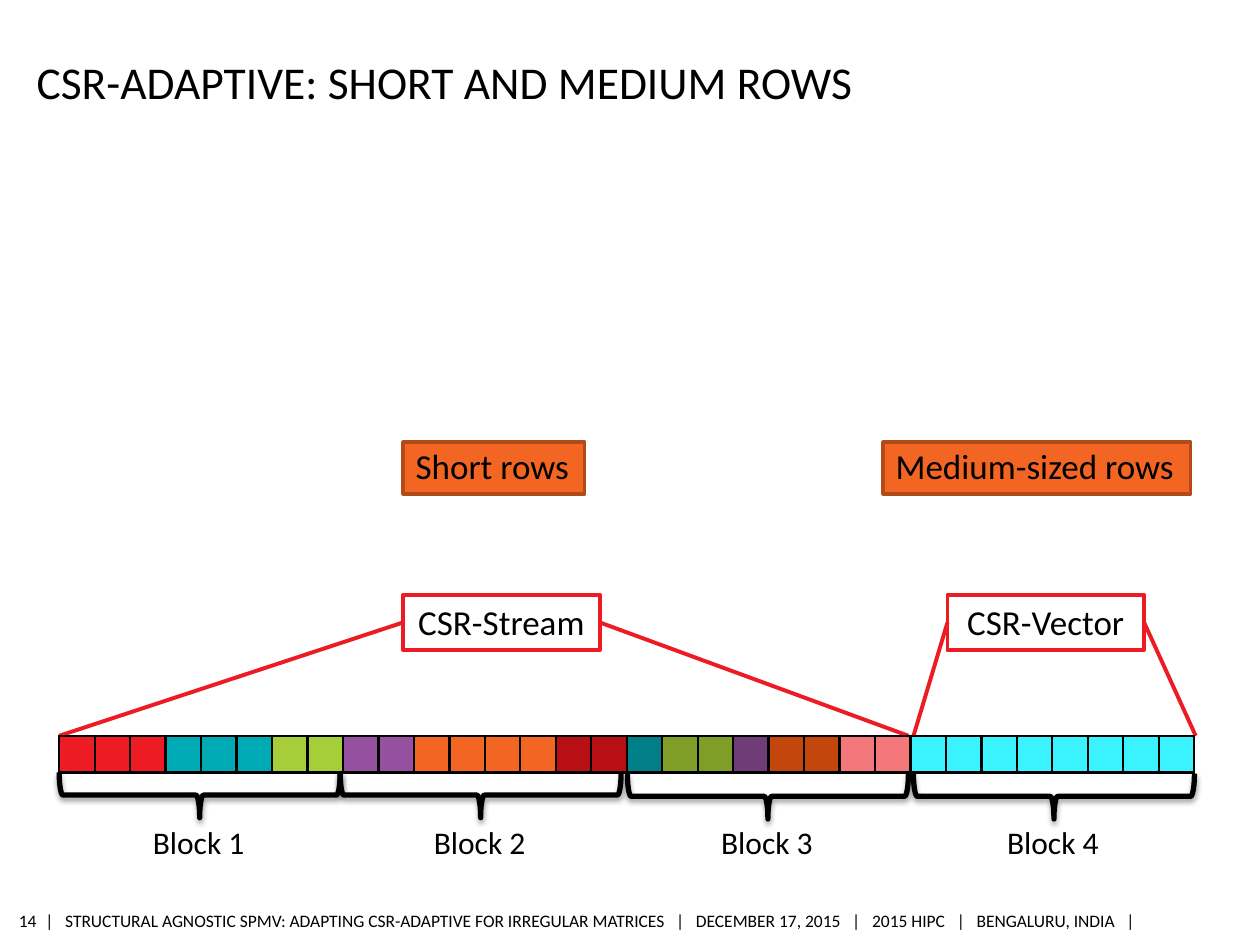
from itertools import chain, repeat
from lxml import etree
from pptx import Presentation, util as u
from pptx.dml.color import RGBColor
from pptx.enum import shapes, text
from pptx.oxml.ns import qn

HUES = {
    "black": "000000", "red": "ED1C24", "teal": "00AAB5", "lime": "A6CE39",
    "plum": "9650A0", "orange": "F26522", "wine": "B80F15", "pine": "007F88",
    "moss": "7E9E27", "grape": "703C78", "rust": "C3470C", "pink": "F4777C",
    "cyan": "3AF3FF", "edge": "B34B19",
}
ROWS = [("red", 3), ("teal", 3), ("lime", 2), ("plum", 2), ("orange", 4),
        ("wine", 2), ("pine", 1), ("moss", 2), ("grape", 1), ("rust", 2),
        ("pink", 2), ("cyan", 8)]
BLOCKS = [(0.47, 6.13), (2.7, 6.13), (4.98, 6.14), (7.25, 6.14)]
FOOT = ("|   STRUCTURAL AGNOSTIC SPMV: ADAPTING CSR-ADAPTIVE FOR IRREGULAR MATRICES"
        "   |   DECEMBER 17, 2015   |   2015 HIPC   |   BENGALURU, INDIA   |")
ALIGN = text.PP_ALIGN
ANCHOR = text.MSO_ANCHOR


def hue(name):
    """Return the named colour."""
    return RGBColor.from_string(HUES[name])


def sub(parent, tag, **attrs):
    """Add a drawing element to its parent."""
    return etree.SubElement(parent, qn(tag), **attrs)


def write(shape, words, size, align=ALIGN.LEFT, anchor=ANCHOR.TOP, wrap=True):
    """Write one run into a shape and return its paragraph."""
    frame = shape.text_frame
    frame.word_wrap = wrap
    frame.vertical_anchor = anchor
    para = frame.paragraphs[0]
    para.alignment = align
    run = para.add_run()
    run.text = words
    run.font.size = u.Pt(size)
    run.font.name = "Calibri"
    run.font.color.rgb = hue("black")
    return para


def add_shape(slide, kind, box, line, width, fill=None):
    """Add a preset shape with its line and fill."""
    shape = slide.shapes.add_shape(kind, *map(u.Inches, box))
    shape.line.color.rgb = hue(line)
    shape.line.width = u.Pt(width)
    if fill:
        shape.fill.solid()
        shape.fill.fore_color.rgb = hue(fill)
    else:
        shape.fill.background()
    shape.shadow.inherit = False
    return shape


def add_title(slide, box, words):
    """Place the slide title."""
    title = slide.shapes.title
    title.left, title.top, title.width, title.height = map(u.Inches, box)
    frame = title.text_frame
    frame.margin_left = frame.margin_right = frame.margin_bottom = 0
    frame.auto_size = text.MSO_AUTO_SIZE.NONE
    write(title, words, 26, anchor=ANCHOR.BOTTOM)


def add_foot(slide, box, words, align):
    """Place one part of the footer."""
    part = slide.shapes.add_textbox(*map(u.Inches, box))
    frame = part.text_frame
    frame.margin_left = frame.margin_right = 0
    frame.margin_top = frame.margin_bottom = u.Inches(0.04)
    write(part, words, 10, align, ANCHOR.MIDDLE, False)


def add_tag(slide, box, words):
    """Place an orange tag that names a kind of row."""
    tag = add_shape(slide, shapes.MSO_SHAPE.RECTANGLE, box, "edge", 2, "orange")
    para = write(tag, words, 20, anchor=ANCHOR.MIDDLE, wrap=False)
    para.line_spacing = 0.9
    para.space_after = u.Pt(3)


def add_kernel(slide, box, words, ends):
    """Place a kernel box and the lines to both ends of its cells."""
    kernel = add_shape(slide, shapes.MSO_SHAPE.RECTANGLE, box, "red", 2.25)
    write(kernel, words, 20, ALIGN.CENTER).space_after = u.Pt(6)
    for side, x in zip((1, 3), ends):
        line = slide.shapes.add_connector(
            shapes.MSO_CONNECTOR.STRAIGHT, 0, 0, u.Inches(x), u.Inches(5.84))
        line.begin_connect(kernel, side)
        line.line.color.rgb = hue("red")
        line.line.width = u.Pt(2.25)
        sub(line._element.spPr, "a:effectLst")


def add_border(cell):
    """Draw a black border round a cell."""
    props = cell._tc.get_or_add_tcPr()
    for tag in ("a:lnL", "a:lnR", "a:lnT", "a:lnB"):
        line = sub(props, tag, w=str(u.Pt(1.5)))
        sub(sub(line, "a:solidFill"), "a:srgbClr", val=HUES["black"])


def add_cells(slide, box):
    """Place the strip of matrix values, coloured by row."""
    names = list(chain.from_iterable(repeat(name, n) for name, n in ROWS))
    table = slide.shapes.add_table(1, len(names), *map(u.Inches, box)).table
    table.first_row = table.horz_banding = False
    for col, cell, name in zip(table.columns, table.rows[0].cells, names):
        col.width = int(u.Inches(box[2]) / len(names))
        cell.margin_left = cell.margin_right = 0
        cell.margin_top = cell.margin_bottom = 0
        add_border(cell)
        cell.fill.solid()
        cell.fill.fore_color.rgb = hue(name)
        sub(cell.text_frame.paragraphs[0]._p, "a:endParaRPr", sz="800")


def add_block(slide, box, words):
    """Place a brace below the cells and its label."""
    left, top, wide, high = box
    mid = left + wide / 2
    spot = (mid - high / 2, top + high / 2 - wide / 2, high, wide)
    brace = add_shape(slide, shapes.MSO_SHAPE.LEFT_BRACE, spot, "black", 3)
    brace.rotation = 270
    glow = sub(brace._element.spPr.find(qn("a:effectLst")), "a:outerShdw",
               blurRad=str(u.Pt(3.1)), dist=str(u.Pt(1.6)),
               dir="5400000", rotWithShape="0")
    sub(sub(glow, "a:srgbClr", val=HUES["black"]), "a:alpha", val="38000")
    label = slide.shapes.add_textbox(
        *map(u.Inches, (mid - 0.47, 6.48, 0.94, 0.4)))
    write(label, words, 18, wrap=False)


def main():
    """Build and save the slide."""
    deck = Presentation()
    deck.slide_width, deck.slide_height = u.Inches(10), u.Inches(7.5)
    slide = deck.slides.add_slide(deck.slide_layouts[5])
    add_foot(slide, (0.36, 7.18, 8.73, 0.26), FOOT, ALIGN.LEFT)
    add_foot(slide, (0.13, 7.18, 0.16, 0.26), "14", ALIGN.RIGHT)
    add_title(slide, (0.29, 0.34, 8.4, 0.52),
              "CSR-ADAPTIVE: SHORT AND MEDIUM ROWS")
    add_kernel(slide, (3.2, 4.72, 1.56, 0.44), "CSR-Stream", (0.47, 7.21))
    add_kernel(slide, (7.52, 4.72, 1.56, 0.44), "CSR-Vector", (7.25, 9.49))
    add_cells(slide, (0.47, 5.84, 9.02, 0.29))
    for num, (left, top) in enumerate(BLOCKS, 1):
        add_block(slide, (left, top, 2.23, 0.36), f"Block {num}")
    add_tag(slide, (3.2, 3.51, 1.44, 0.41), "Short rows")
    add_tag(slide, (7.01, 3.51, 2.44, 0.41), "Medium-sized rows")
    deck.save("out.pptx")


if __name__ == "__main__":
    main()
